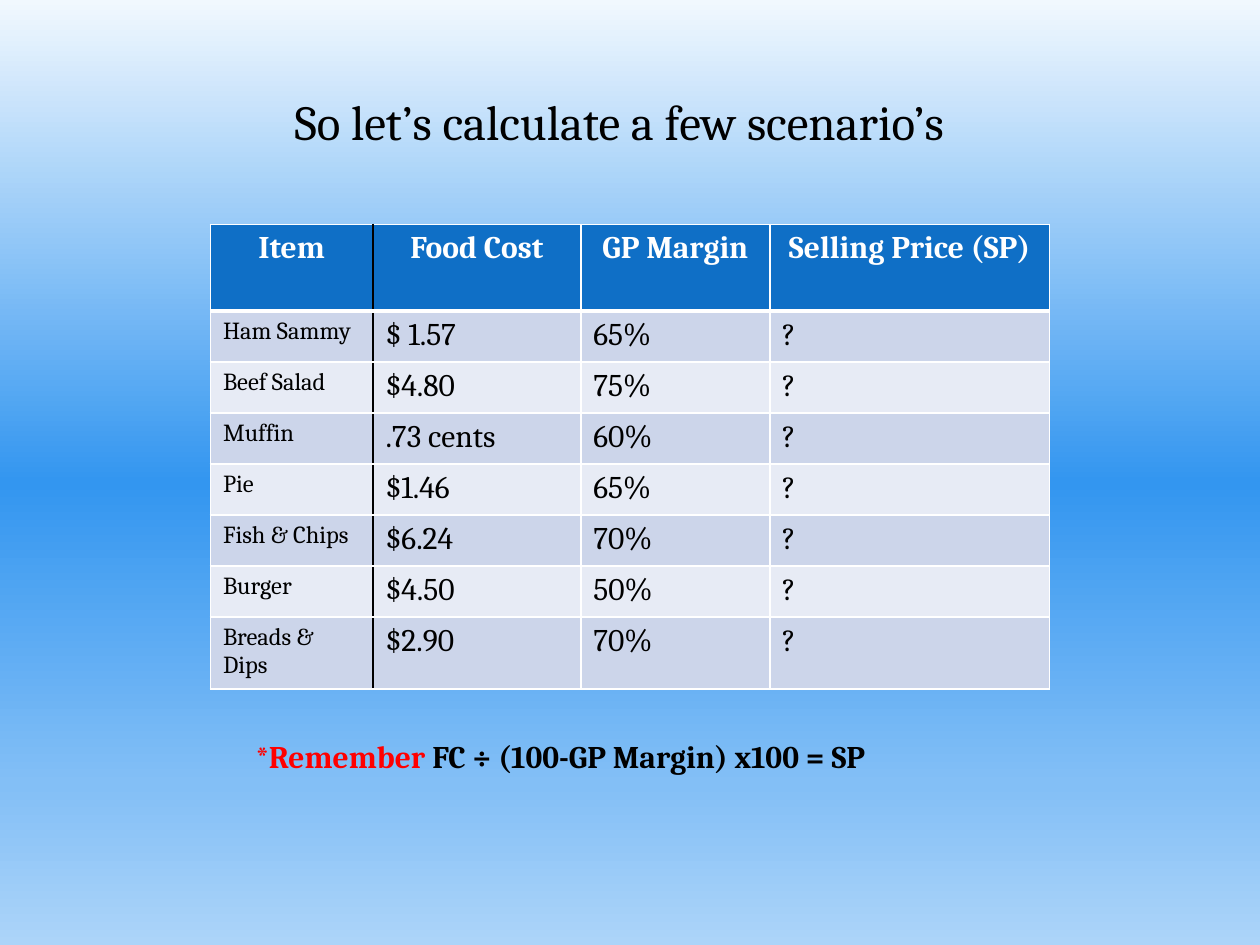
from lxml import etree
from pptx import Presentation, util as u
from pptx.dml.color import RGBColor
from pptx.enum import text
from pptx.oxml.ns import qn

FONT = "Cambria"
BLACK, WHITE, RED = "000000", "FFFFFF", "FF0000"
HEADER_BLUE = "0F6FC6"
BAND_FILLS = ("CCD5EA", "E7EBF5")
BACKGROUND_STOPS = ((0, "F1F8FE"), (51, "3396F0"), (83, "83BFF6"), (100, "ACD4F9"))

HEADINGS = ("Item", "Food Cost", "GP Margin", "Selling Price (SP)")
ITEMS = (
    ("Ham Sammy", "$ 1.57", "65%"),
    ("Beef Salad", "$4.80", "75%"),
    ("Muffin", ".73 cents", "60%"),
    ("Pie", "$1.46", "65%"),
    ("Fish & Chips", "$6.24", "70%"),
    ("Burger", "$4.50", "50%"),
    ("Breads & Dips", "$2.90", "70%"),
)
COLUMN_WIDTHS = (1.29, 1.65, 1.5, 2.22)
HEADER_HEIGHT, ROW_HEIGHT, LAST_ROW_HEIGHT = 0.69, 0.405, 0.57


def color(hex_string):
    return RGBColor.from_string(hex_string)


def inches(box):
    return [u.Inches(length) for length in box]


def add_run(paragraph, wording, size, hex_string, bold=False):
    run = paragraph.add_run()
    run.text = wording
    run.font.name = FONT
    run.font.size = u.Pt(size)
    run.font.bold = bold
    run.font.color.rgb = color(hex_string)


def paint_background(slide):
    fill = slide.background.fill
    fill.gradient()
    fill.gradient_angle = 270
    stops = slide.element.find(".//" + qn("a:gsLst"))
    for stop in list(stops):
        stops.remove(stop)
    for percent, hex_string in BACKGROUND_STOPS:
        stop = etree.SubElement(stops, qn("a:gs"), pos=str(percent * 1000))
        etree.SubElement(stop, qn("a:srgbClr"), val=hex_string)


def add_text_line(slide, box, runs):
    """Add one unwrapped line; each run is (wording, size, colour, bold)."""
    frame = slide.shapes.add_textbox(*inches(box)).text_frame
    frame.word_wrap = False
    frame.auto_size = text.MSO_AUTO_SIZE.SHAPE_TO_FIT_TEXT
    for run in runs:
        add_run(frame.paragraphs[0], *run)


def set_borders(cell, borders):
    """Draw borders given as side: (colour, points); call before filling the cell."""
    properties = cell._tc.get_or_add_tcPr()
    for side in "LRTB":
        hex_string, points = borders[side]
        line = etree.SubElement(properties, qn("a:ln" + side), w=str(u.Pt(points)))
        fill = etree.SubElement(line, qn("a:solidFill"))
        etree.SubElement(fill, qn("a:srgbClr"), val=hex_string)


def style_cell(cell, row, column):
    borders = dict.fromkeys("LRTB", (WHITE, 1))
    if column < 2:
        borders["R" if column == 0 else "L"] = (BLACK, 1)
    if row < 2:
        borders["B" if row == 0 else "T"] = (WHITE, 3)
    set_borders(cell, borders)
    cell.fill.solid()
    cell.fill.fore_color.rgb = color(HEADER_BLUE if row == 0 else BAND_FILLS[(row - 1) % 2])


def add_price_table(slide, box):
    rows = [HEADINGS] + [item + ("?",) for item in ITEMS]
    table = slide.shapes.add_table(len(rows), len(HEADINGS), *inches(box)).table
    for column, width in zip(table.columns, COLUMN_WIDTHS):
        column.width = u.Inches(width)
    heights = [HEADER_HEIGHT] + [ROW_HEIGHT] * (len(rows) - 2) + [LAST_ROW_HEIGHT]
    for r, (wordings, height) in enumerate(zip(rows, heights)):
        table.rows[r].height = u.Inches(height)
        for c, wording in enumerate(wordings):
            cell = table.cell(r, c)
            style_cell(cell, r, c)
            paragraph = cell.text_frame.paragraphs[0]
            if r == 0:
                paragraph.alignment = text.PP_ALIGN.CENTER
                add_run(paragraph, wording, 18, WHITE, True)
            else:
                add_run(paragraph, wording, 14 if c == 0 else 18, BLACK)


def main():
    presentation = Presentation()
    presentation.slide_width, presentation.slide_height = inches((10, 7.5))
    slide = presentation.slides.add_slide(presentation.slide_layouts[6])
    paint_background(slide)
    add_text_line(slide, (2.24, 0.68, 5.6, 0.57),
                  [("So let’s calculate a few scenario’s", 28, BLACK)])
    add_price_table(slide, (1.67, 1.78, 6.67, 3.7))
    add_text_line(slide, (1.93, 5.8, 5.3, 0.4),
                  [("*", 18, RED),
                   ("Remember ", 18, RED, True),
                   ("FC ÷ (100-GP Margin) x100 = SP", 18, BLACK, True)])
    presentation.save("out.pptx")


if __name__ == "__main__":
    main()
